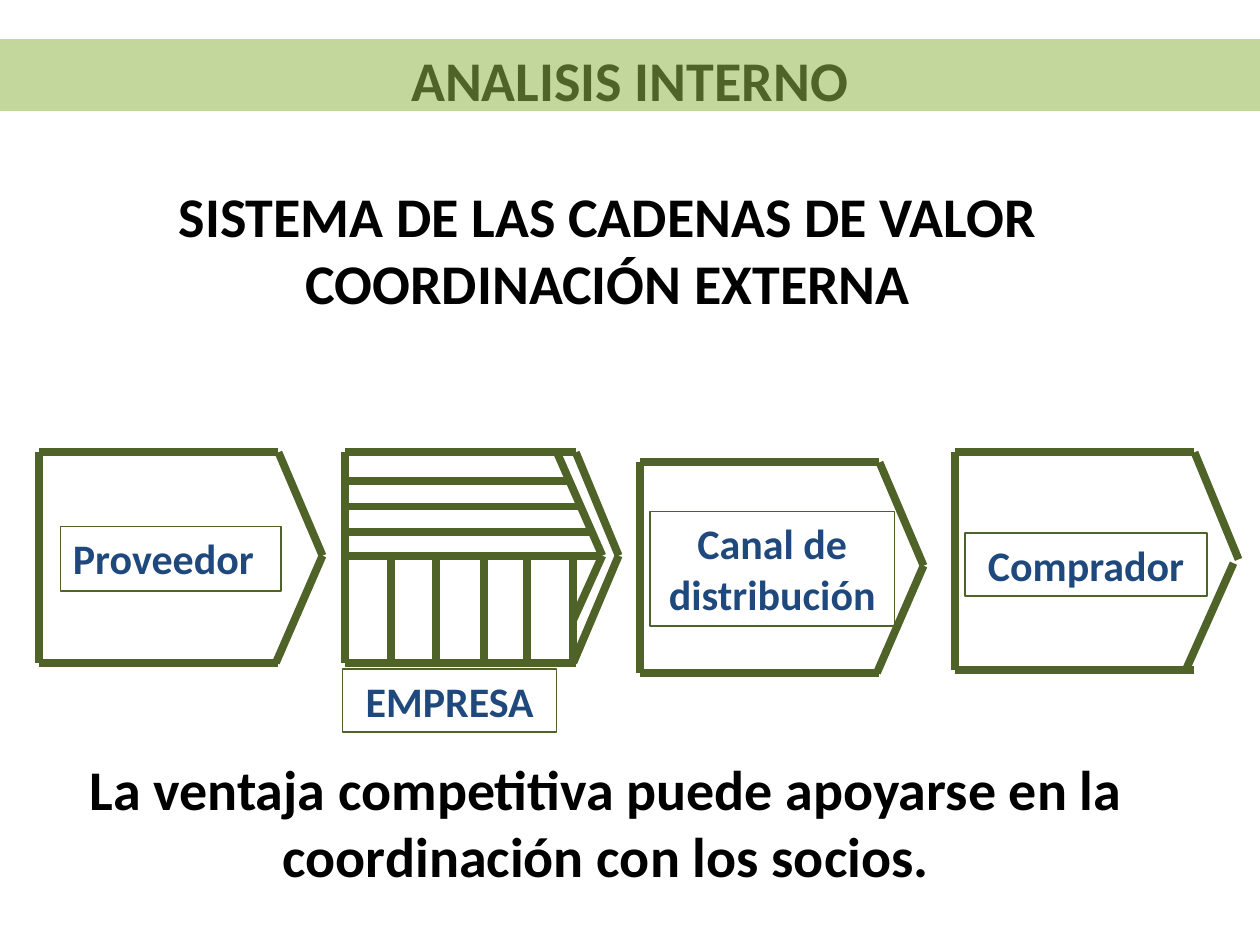
from dataclasses import dataclass

from lxml.etree import SubElement
from pptx import Presentation
from pptx.dml.color import RGBColor as Color
from pptx.enum.shapes import MSO_CONNECTOR as Connector, MSO_SHAPE as Shape
from pptx.enum.text import MSO_ANCHOR as Anchor, MSO_AUTO_SIZE as AutoSize, PP_ALIGN as Align
from pptx.oxml.ns import qn
from pptx.util import Inches, Pt


@dataclass(frozen=True)
class Theme:
    font: str = "Calibri"
    green: Color = Color(0x4F, 0x62, 0x28)
    band: Color = Color(0xC3, 0xD6, 0x9B)
    blue: Color = Color(0x1F, 0x49, 0x7D)
    black: Color = Color(0, 0, 0)
    heading: Pt = Pt(32)
    label: Pt = Pt(24)
    thick: Pt = Pt(4.5)
    thin: Pt = Pt(0.75)


class SlideBuilder:
    def __init__(self, slide, theme):
        self.slide = slide
        self.theme = theme

    def set_text(self, shape, lines, size, color, align=Align.CENTER):
        frame = shape.text_frame
        frame.word_wrap = True
        frame.auto_size = AutoSize.NONE
        frame.vertical_anchor = Anchor.TOP
        frame.text = "\n".join(lines)
        for paragraph in frame.paragraphs:
            paragraph.alignment = align
            font = paragraph.font
            font.name, font.size, font.bold = self.theme.font, size, True
            font.color.rgb = color

    def title(self, text, left, top, width, height):
        title = self.slide.shapes.title
        title.left, title.top = Inches(left), Inches(top)
        title.width, title.height = Inches(width), Inches(height)
        title.fill.solid()
        title.fill.fore_color.rgb = self.theme.band
        self.set_text(title, [text], self.theme.heading, self.theme.green)

    def statement(self, lines, left, top, width, height):
        box = self.slide.shapes.add_textbox(
            Inches(left), Inches(top), Inches(width), Inches(height))
        self.set_text(box, lines, self.theme.heading, self.theme.black)

    def label(self, text, left, top, width, height, align=Align.CENTER):
        box = self.slide.shapes.add_shape(
            Shape.RECTANGLE, Inches(left), Inches(top), Inches(width), Inches(height))
        box.shadow.inherit = False
        box.fill.background()
        box.line.color.rgb = self.theme.green
        box.line.width = self.theme.thin
        self.set_text(box, [text], self.theme.label, self.theme.blue, align)

    def line(self, start, end):
        line = self.slide.shapes.add_connector(
            Connector.STRAIGHT, *(Inches(value) for value in (*start, *end)))
        line.line.color.rgb = self.theme.green
        line.line.width = self.theme.thick
        SubElement(line._element.spPr, qn("a:effectLst"))

    def chevron(self, left, top, height=1.67, body=1.9, foot=1.88,
                upper_tip=(2.25, 0.82), lower_tip=(2.25, 0.82)):
        """Outline a link of the chain; foot and tips are offsets from its top left."""
        bottom, shoulder = top + height, left + body
        self.line((left, bottom), (shoulder, bottom))
        self.line((left, top), (shoulder, top))
        self.line((left, bottom), (left, top))
        self.line((left + lower_tip[0], top + lower_tip[1]), (left + foot, bottom))
        self.line((left + upper_tip[0], top + upper_tip[1]), (shoulder, top))

    def company_activities(self, left, top, middle, bottom):
        """Draw support activities as rows, primary ones as columns, and the margin."""
        margin_tip = (4.78, middle)
        for y, right in ((middle, 4.78), (4.22, 4.69), (4.02, 4.59), (3.82, 4.52)):
            self.line((left, y), (right, y))
        for x in (3.1, 3.46, 3.84, 4.18, 4.55):
            self.line((x, middle), (x, bottom))
        self.line((4.55, 4.92), margin_tip)
        self.line(margin_tip, (4.42, top))


def main():
    deck = Presentation()
    deck.slide_width, deck.slide_height = Inches(10), Inches(7.5)
    page = SlideBuilder(deck.slides.add_slide(deck.slide_layouts[5]), Theme())

    page.title("ANALISIS INTERNO", 0, 0.31, 10, 0.57)
    page.statement(["SISTEMA DE LAS CADENAS DE VALOR", "COORDINACIÓN EXTERNA"],
                   0.7, 1.39, 8.25, 1.18)

    page.chevron(0.31, 3.59)
    page.label("Proveedor", 0.48, 4.18, 1.75, 0.51, Align.LEFT)

    page.chevron(2.74, 3.59, body=1.83, foot=1.81,
                 upper_tip=(2.17, 0.82), lower_tip=(2.17, 0.82))
    page.company_activities(2.74, 3.59, 4.41, 5.26)
    page.label("EMPRESA", 2.72, 5.31, 1.7, 0.5)

    page.chevron(5.08, 3.67)
    page.label("Canal de distribución", 5.16, 4.06, 1.94, 0.91)

    page.chevron(7.58, 3.59, height=1.73, foot=1.83,
                 upper_tip=(2.25, 0.85), lower_tip=(2.21, 0.88))
    page.label("Comprador", 7.66, 4.23, 1.92, 0.5)

    page.statement(
        ["La ventaja competitiva puede apoyarse en la coordinación con los socios."],
        0.31, 5.94, 9, 1.18)

    deck.save("out.pptx")


if __name__ == "__main__":
    main()
